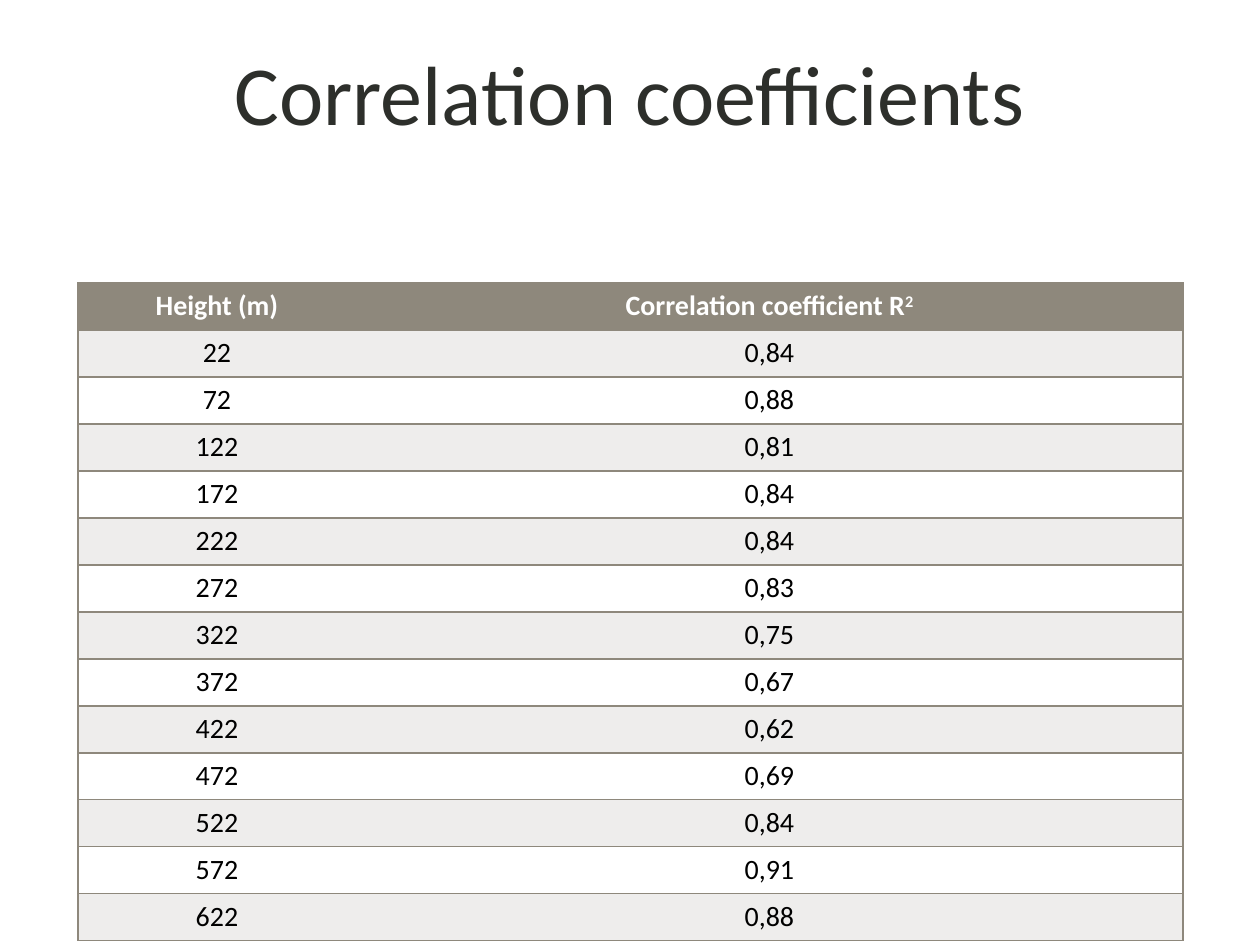
from lxml import etree
from pptx import Presentation
from pptx import util as u
from pptx.dml.color import RGBColor
from pptx.enum import text
from pptx.oxml.ns import qn

TITLE = "Correlation coefficients"
HEAD = [("Height (m)", ""), ("Correlation coefficient R", "2")]
START, STEP = 22, 50
COEFFS = ["0,84", "0,88", "0,81", "0,84", "0,84", "0,83", "0,75",
          "0,67", "0,62", "0,69", "0,84", "0,91", "0,88"]

THEME = {
    "font": "Calibri", "title": 48, "cell": 16,
    "ink": "2D2F2B", "text": "000000", "light": "FFFFFF",
    "brand": "8E887C", "bands": ("EEEDEC", "FFFFFF"),
}
SCALE = 914400 / 126
COLS = (278, 827)
ROW = 47


def px(n):
    return u.Emu(round(n * SCALE))


def style(run, size, color, bold=False):
    form = {"name": THEME["font"], "size": u.Pt(size), "bold": bold}
    for key, value in form.items():
        setattr(run.font, key, value)
    run.font.color.rgb = RGBColor.from_string(color)


def write(frame, parts, size, color, bold=False):
    para = frame.paragraphs[0]
    para.alignment = text.PP_ALIGN.CENTER
    for i, part in enumerate(parts):
        if part:
            run = para.add_run()
            run.text = part
            style(run, size, color, bold)
            if i:
                run.font._element.set("baseline", "30000")


def border(cell, sides):
    props = cell._tc.get_or_add_tcPr()
    for side in "LRTB":
        line = etree.SubElement(props, qn(f"a:ln{side}"), w=str(u.Pt(1)))
        if side in sides:
            fill = etree.SubElement(line, qn("a:solidFill"))
            etree.SubElement(fill, qn("a:srgbClr"), val=THEME["brand"])
        else:
            etree.SubElement(line, qn("a:noFill"))


def add_title(slide):
    title = slide.shapes.title
    place = {"left": 94, "top": 9, "width": 1071, "height": 166}
    for key, value in place.items():
        setattr(title, key, px(value))
    title.text_frame.vertical_anchor = text.MSO_ANCHOR.MIDDLE
    write(title.text_frame, [TITLE], THEME["title"], THEME["ink"])


def add_grid(slide):
    rows = [HEAD] + [((str(START + STEP * i),), (value,))
                     for i, value in enumerate(COEFFS)]
    grid = slide.shapes.add_table(
        len(rows), len(COLS), px(78), px(283),
        px(sum(COLS)), px(ROW * len(rows))).table
    for col, width in zip(grid.columns, COLS):
        col.width = px(width)
    for r, row in enumerate(rows):
        grid.rows[r].height = px(ROW)
        fill = THEME["bands"][(r - 1) % 2] if r else THEME["brand"]
        color = THEME["text"] if r else THEME["light"]
        for c, parts in enumerate(row):
            cell = grid.cell(r, c)
            border(cell, "RTB" if c else "LTB")
            cell.fill.solid()
            cell.fill.fore_color.rgb = RGBColor.from_string(fill)
            write(cell.text_frame, parts, THEME["cell"], color, r == 0)


def main():
    deck = Presentation()
    deck.slide_width, deck.slide_height = px(1260), px(945)
    slide = deck.slides.add_slide(deck.slide_layouts[5])
    add_title(slide)
    add_grid(slide)
    deck.save("out.pptx")


if __name__ == "__main__":
    main()
